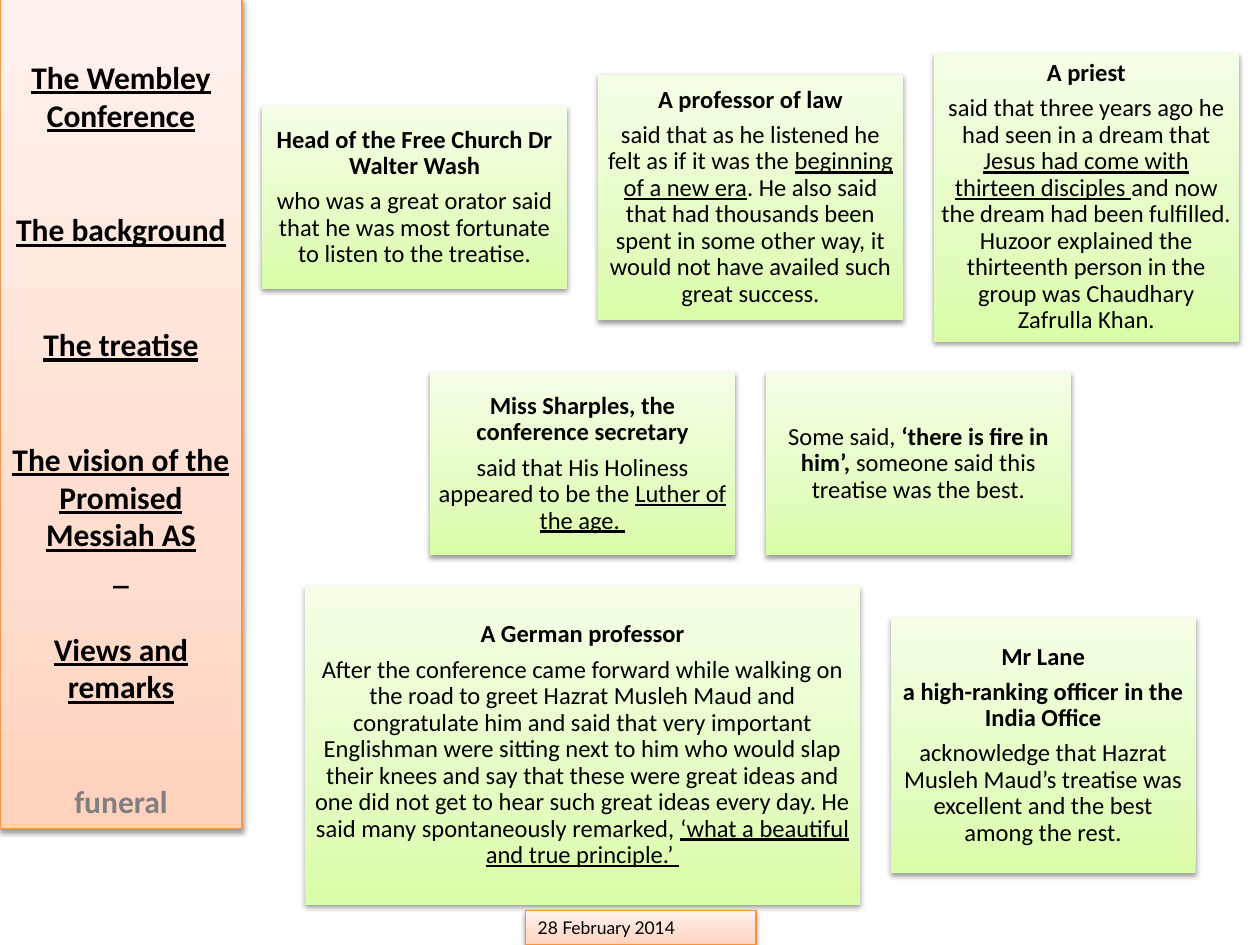
"""Build the Wembley Conference slide of views and remarks."""
from dataclasses import dataclass

import lxml.etree
import copy
import pptx
import pptx.dml.color
import pptx.enum.shapes
import pptx.enum.text
import pptx.oxml.ns
import pptx.util

Cm = pptx.util.Cm
Pt = pptx.util.Pt
qn = pptx.oxml.ns.qn
CENTER = pptx.enum.text.PP_ALIGN.CENTER
LEFT = pptx.enum.text.PP_ALIGN.LEFT

PEACH = ("FFD2BD", "FFDED0", "FFF2ED")
GREEN = ("DAFDA7", "E4FCC2", "F5FFE7")
STOP_POSITIONS = (0, 0.35, 1)

ROWS_CENTER = 15.13
ROWS_TOP = 1.07
GAP = 0.62
CARD_WIDTH = 6.15
CARD_INSET = 0.15
SIDEBAR_LINE = 21.97


@dataclass(frozen=True)
class Phrase:
    text: str
    bold: bool = False
    underline: bool = False


@dataclass(frozen=True)
class Card:
    height: float
    paragraphs: tuple[tuple[Phrase, ...], ...]
    width: float = CARD_WIDTH


@dataclass(frozen=True)
class Topic:
    text: str
    lines_before: int
    color: str = "000000"
    underline: bool = True


def heading(text: str) -> tuple[Phrase, ...]:
    """Return a paragraph of one bold phrase."""
    return (Phrase(text, bold=True),)


TOPICS = (
    Topic("The Wembley Conference", 0),
    Topic("The background", 2),
    Topic("The treatise", 2),
    Topic("The vision of the Promised Messiah AS", 2),
    Topic("_", 0, underline=False),
    Topic("Views and remarks", 1),
    Topic("funeral", 2, color="808080", underline=False),
)

CARD_ROWS = (
    (
        Card(3.68, (
            heading("Head of the Free Church Dr Walter Wash"),
            (Phrase("who was a great orator said that he was most fortunate to listen "
                    "to the treatise."),),
        )),
        Card(4.95, (
            heading("A professor of law"),
            (Phrase("said that as he listened he felt as if it was the "),
             Phrase("beginning of a new era", underline=True),
             Phrase(". He also said that had thousands been spent in some other way, "
                    "it would not have availed such great success.")),
        )),
        Card(5.82, (
            heading("A priest"),
            (Phrase("said that three years ago he had seen in a dream that "),
             Phrase("Jesus had come with thirteen disciples ", underline=True),
             Phrase("and now the dream had been fulfilled. Huzoor explained the "
                    "thirteenth person in the group was Chaudhary Zafrulla Khan.")),
        )),
    ),
    (
        Card(3.68, (
            heading("Miss Sharples, the conference secretary"),
            (Phrase("said that His Holiness appeared to be the "),
             Phrase("Luther of the age. ", underline=True)),
        )),
        Card(3.68, (
            (Phrase("Some said, "),
             Phrase("‘there is fire in him’, ", bold=True),
             Phrase("someone said this treatise was the best.")),
        )),
    ),
    (
        Card(6.43, (
            heading("A German professor"),
            (Phrase("After the conference came forward while walking on the road to greet "
                    "Hazrat Musleh Maud and congratulate him and said that very important "
                    "Englishman were sitting next to him who would slap their knees and say "
                    "that these were great ideas and one did not get to hear such great "
                    "ideas every day. He said many spontaneously remarked, "),
             Phrase("‘what a beautiful and true principle.’ ", underline=True)),
        ), width=11.18),
        Card(5.16, (
            heading("Mr Lane"),
            heading("a high-ranking officer in the India Office"),
            (Phrase("acknowledge that Hazrat Musleh Maud’s treatise was excellent and "
                    "the best among the rest."),),
        )),
    ),
)


def rgb(color: str) -> pptx.dml.color.RGBColor:
    """Turn a hex string into a colour."""
    return pptx.dml.color.RGBColor.from_string(color)


def add_text(paragraph, text: str, *, size: float, font: str = "Calibri",
             color: str = "000000", bold: bool = False, underline: bool = False) -> None:
    """Add a formatted run of text to a paragraph."""
    run = paragraph.add_run()
    run.text = text
    run.font.name = font
    run.font.size = Pt(size)
    run.font.bold = bold
    run.font.underline = underline
    run.font.color.rgb = rgb(color)


def add_paragraph(frame, first: bool, alignment=CENTER):
    """Return the frame's first paragraph or a new one, aligned."""
    paragraph = frame.paragraphs[0] if first else frame.add_paragraph()
    paragraph.alignment = alignment
    return paragraph


def add_panel(slide, left: float, top: float, width: float, height: float,
              gradient: tuple[str, ...], outline: str = ""):
    """Add a rectangle with an upward gradient and a soft shadow."""
    panel = slide.shapes.add_shape(pptx.enum.shapes.MSO_SHAPE.RECTANGLE,
                                   Cm(left), Cm(top), Cm(width), Cm(height))
    panel.fill.gradient()
    panel.fill.gradient_angle = 90
    properties = panel._element.spPr
    stop_list = properties.find(".//" + qn("a:gsLst"))
    stop_list.append(copy.deepcopy(stop_list[-1]))
    for stop, position, color in zip(panel.fill.gradient_stops, STOP_POSITIONS, gradient):
        stop.position = position
        stop.color.rgb = rgb(color)
    if outline:
        panel.line.color.rgb = rgb(outline)
        panel.line.width = Pt(0.75)
    else:
        panel.line.fill.background()
    panel.shadow.inherit = False
    shadow = lxml.etree.SubElement(
        properties.find(qn("a:effectLst")), qn("a:outerShdw"), blurRad=str(Pt(3.1)),
        dist=str(Pt(1.6)), dir="5400000", rotWithShape="0")
    shade = lxml.etree.SubElement(shadow, qn("a:srgbClr"), val="000000")
    lxml.etree.SubElement(shade, qn("a:alpha"), val="38000")
    panel.text_frame.word_wrap = True
    panel.text_frame.vertical_anchor = pptx.enum.text.MSO_ANCHOR.MIDDLE
    return panel


def add_sidebar(slide) -> None:
    """Draw the column of topics."""
    frame = add_panel(slide, 0, -0.03, 4.88, 16.74, PEACH, "F79646").text_frame
    frame.vertical_anchor = pptx.enum.text.MSO_ANCHOR.TOP
    frame.margin_top = Cm(1.2)
    for index, topic in enumerate(TOPICS):
        paragraph = add_paragraph(frame, index == 0)
        paragraph.space_before = Pt(topic.lines_before * SIDEBAR_LINE)
        add_text(paragraph, topic.text, size=18, bold=True,
                 color=topic.color, underline=topic.underline)


def add_card(slide, card: Card, left: float, top: float) -> None:
    """Draw one remark with its speaker."""
    frame = add_panel(slide, left, top, card.width, card.height, GREEN).text_frame
    frame.margin_left = frame.margin_right = Cm(CARD_INSET)
    frame.margin_top = frame.margin_bottom = Cm(CARD_INSET)
    for index, phrases in enumerate(card.paragraphs):
        paragraph = add_paragraph(frame, index == 0)
        paragraph.line_spacing = 0.9
        paragraph.space_after = Pt(4.9)
        for phrase in phrases:
            add_text(paragraph, phrase.text, size=14,
                     bold=phrase.bold, underline=phrase.underline)


def add_card_rows(slide) -> None:
    """Stack the rows of cards, each centred across and along its row."""
    top = ROWS_TOP
    for row in CARD_ROWS:
        row_height = max(card.height for card in row)
        row_width = sum(card.width for card in row) + GAP * (len(row) - 1)
        left = ROWS_CENTER - row_width / 2
        for card in row:
            add_card(slide, card, left, top + (row_height - card.height) / 2)
            left += card.width + GAP
        top += row_height + GAP


def add_date(slide) -> None:
    """Draw the date at the foot of the slide."""
    frame = add_panel(slide, 10.59, 18.36, 4.65, 0.69, PEACH, "F69240").text_frame
    add_text(add_paragraph(frame, True, LEFT), "28 February 2014", size=10, font="Lato")


def main() -> None:
    """Build and save the slide."""
    deck = pptx.Presentation()
    deck.slide_width, deck.slide_height = Cm(25.4), Cm(19.05)
    slide = deck.slides.add_slide(deck.slide_layouts[6])
    add_sidebar(slide)
    add_card_rows(slide)
    add_date(slide)
    deck.save("out.pptx")


if __name__ == "__main__":
    main()
